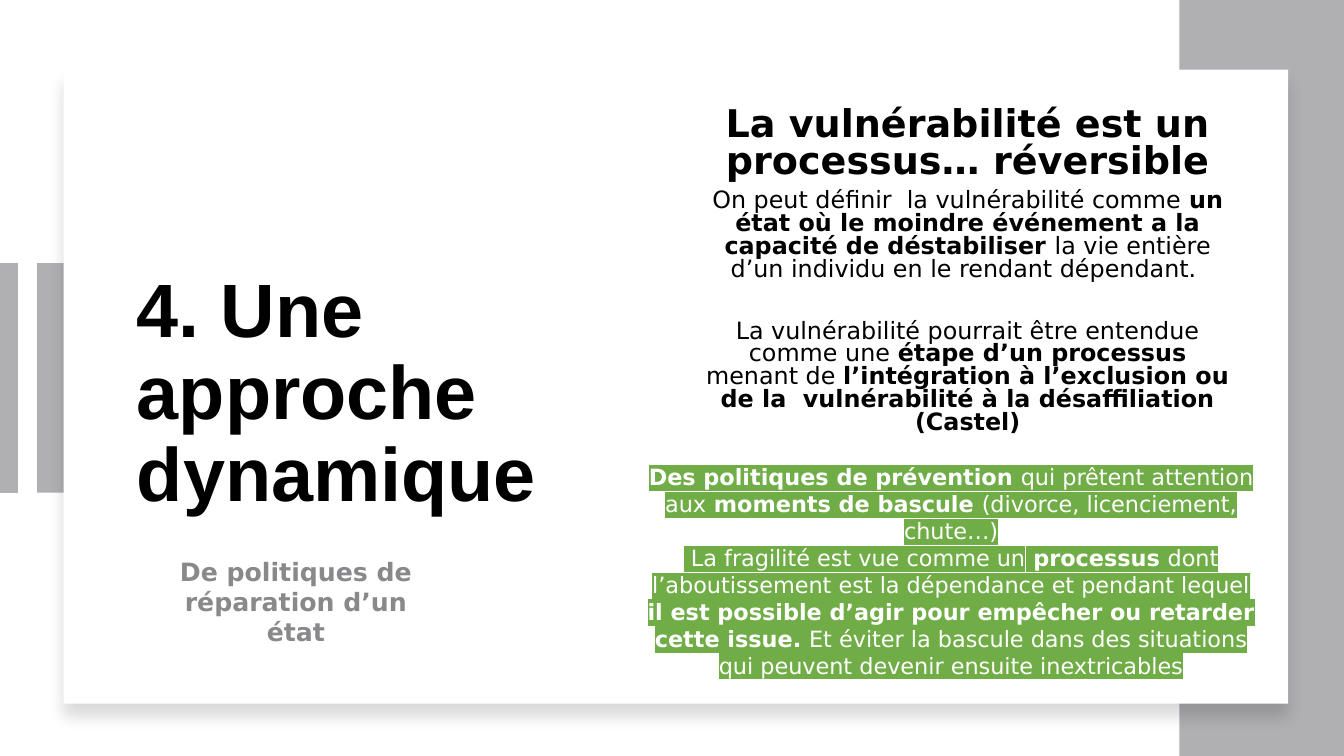
import pptx
import pptx.dml.color
import pptx.enum.shapes
import pptx.enum.text
import pptx.oxml
import pptx.oxml.ns
import pptx.util
from lxml import etree

Pt = pptx.util.Pt
ALIGN = pptx.enum.text.PP_ALIGN
ANCHOR = pptx.enum.text.MSO_ANCHOR
qn = pptx.oxml.ns.qn

COLOURS = {"white": "FFFFFF", "black": "000000", "band": "B0B0B3",
           "green": "70AD47", "muted": "89898B"}


def rgb(name):
    return pptx.dml.color.RGBColor.from_string(COLOURS[name])


class SlideBuilder:
    def __init__(self, slide, font):
        self.slide = slide
        self.font = font

    def rect(self, x, y, w, h, fill):
        kind = pptx.enum.shapes.MSO_SHAPE.RECTANGLE
        s = self.slide.shapes.add_shape(kind, Pt(x), Pt(y), Pt(w), Pt(h))
        s.shadow.inherit = False
        s.fill.solid()
        s.fill.fore_color.rgb = rgb(fill)
        s.line.fill.background()
        return s

    def card(self, x, y, w, h):
        """White rectangle with a soft shadow below it."""
        s = self.rect(x, y, w, h, "white")
        effects = s._element.spPr.find(qn("a:effectLst"))
        shadow = etree.SubElement(
            effects, qn("a:outerShdw"), blurRad=str(Pt(11)), dist=str(Pt(10)),
            dir="5400000", algn="t", rotWithShape="0")
        colour = etree.SubElement(shadow, qn("a:srgbClr"), val=COLOURS["black"])
        etree.SubElement(colour, qn("a:alpha"), val="15000")

    def line(self, x1, y1, x2, y2, colour, width):
        kind = pptx.enum.shapes.MSO_CONNECTOR.STRAIGHT
        c = self.slide.shapes.add_connector(kind, Pt(x1), Pt(y1), Pt(x2), Pt(y2))
        c.line.color.rgb = rgb(colour)
        c.line.width = Pt(width)
        etree.SubElement(c._element.spPr, qn("a:effectLst"))

    def text(self, x, y, w, h, anchor=ANCHOR.TOP):
        s = self.slide.shapes.add_textbox(Pt(x), Pt(y), Pt(w), Pt(h))
        tf = s.text_frame
        tf.word_wrap = True
        tf.vertical_anchor = anchor
        return tf

    def paragraph(self, tf, marked, size, colour="black", font=None,
                  highlight=None, indent=0, **formats):
        """Add a paragraph; text between asterisks is bold."""
        p = tf.paragraphs[0]
        if p.runs:
            p = tf.add_paragraph()
        if indent:
            p._p.get_or_add_pPr().set("marL", str(Pt(indent)))
        for name, value in formats.items():
            setattr(p, name, value)
        for i, part in enumerate(marked.split("*")):
            if not part:
                continue
            r = p.add_run()
            r.text = part
            run_format = {"size": Pt(size), "bold": i % 2 == 1,
                          "name": font or self.font}
            for name, value in run_format.items():
                setattr(r.font, name, value)
            r.font.color.rgb = rgb(colour)
            if highlight:
                mark = etree.Element(qn("a:highlight"))
                etree.SubElement(mark, qn("a:srgbClr"), val=COLOURS[highlight])
                r.font._element.find(qn("a:solidFill")).addnext(mark)


def main():
    prs = pptx.Presentation()
    prs.slide_width, prs.slide_height = Pt(960), Pt(540)
    b = SlideBuilder(prs.slides.add_slide(prs.slide_layouts[6]), "DejaVu Sans")

    b.rect(0, 0, 960, 540, "white")
    b.rect(26.6, 188, 24.5, 164, "band")
    b.line(5.8, 188, 5.8, 352, "band", 14)
    b.rect(842.4, 0, 117.6, 540, "band")
    b.card(45.4, 49.7, 874.8, 452.9)

    title = b.text(90.7, 97.9, 315.4, 368.6, ANCHOR.MIDDLE)
    b.paragraph(title, "*4. Une approche dynamique*", 54, font="Arial",
                line_spacing=0.9)

    body = b.text(495.4, 74, 391.7, 240)
    for marked, size, after in [
        ("*La vulnérabilité est un processus… réversible*", 27.2, 6),
        ("On peut définir  la vulnérabilité comme *un état où le moindre "
         "événement a la capacité de déstabiliser *la vie entière d’un "
         "individu en le rendant dépendant. ", 17, 28),
        ("La vulnérabilité pourrait être entendue comme une *étape d’un "
         "processus *menant de *l’intégration à l’exclusion ou de la "
         " vulnérabilité à la désaffiliation (Castel)*", 17, 6),
    ]:
        b.paragraph(body, marked, size, alignment=ALIGN.CENTER,
                    line_spacing=0.8, space_after=Pt(after))

    policies = b.text(429.1, 327.6, 478.1, 162.7)
    for marked in [
        "*Des politiques de prévention *qui prêtent attention aux* moments de "
        "bascule *(divorce, licenciement, chute…)",
        " La fragilité est vue comme un* processus *dont l’aboutissement est "
        "la dépendance et pendant lequel* il est possible d’agir pour empêcher "
        "ou retarder cette issue. *Et éviter la bascule dans des situations "
        "qui peuvent devenir ensuite inextricables",
    ]:
        b.paragraph(policies, marked, 16, "white", highlight="green",
                    indent=22.5, alignment=ALIGN.CENTER)

    repair = b.text(106.6, 393.8, 209.5, 72.7)
    b.paragraph(repair, "*De politiques de réparation d’un état*", 18, "muted",
                alignment=ALIGN.CENTER)

    prs.save("out.pptx")


if __name__ == "__main__":
    main()
